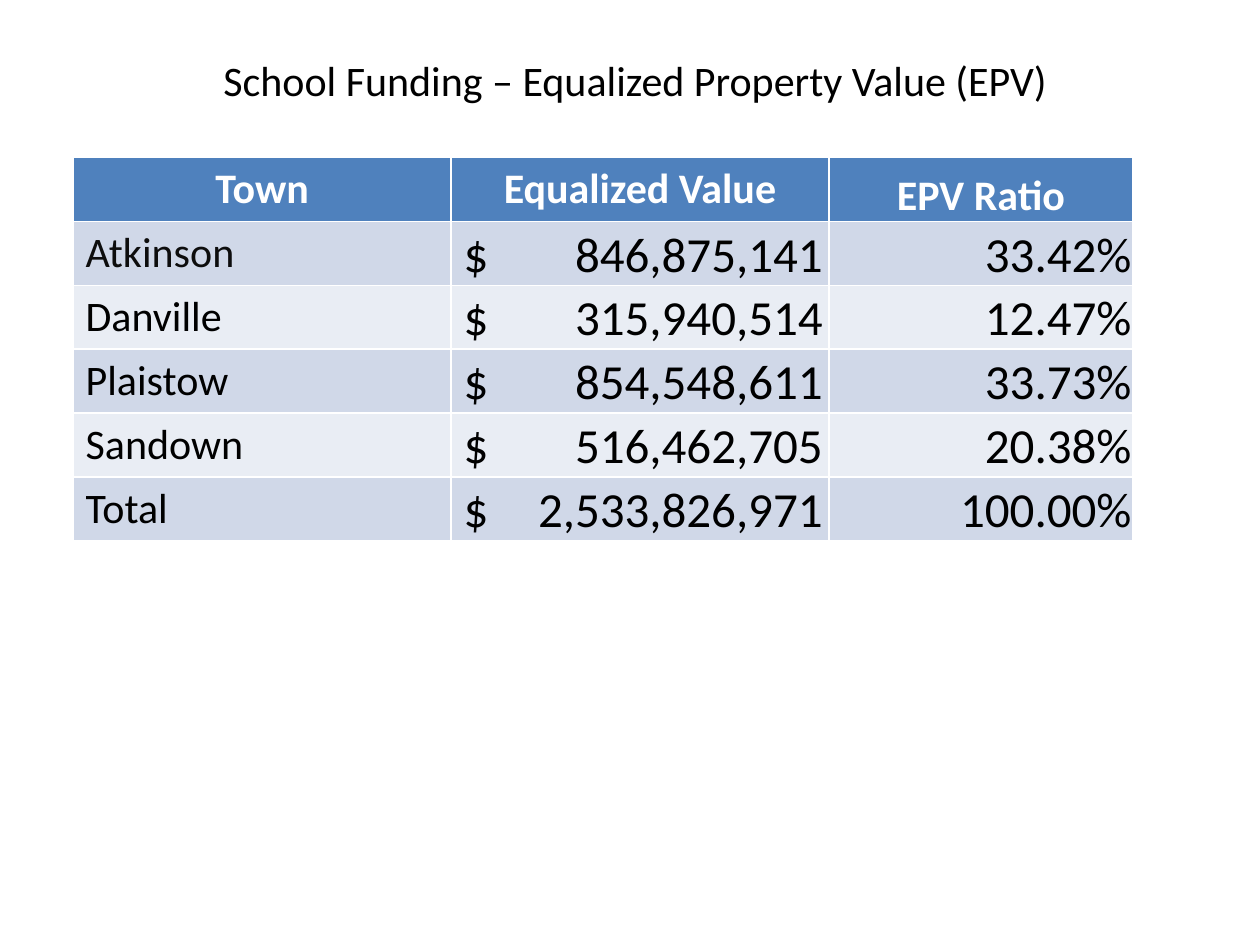
from dataclasses import dataclass

from lxml import etree
from pptx import Presentation
from pptx.dml.color import RGBColor
from pptx.enum.text import MSO_ANCHOR, PP_ALIGN
from pptx.oxml.ns import qn
from pptx.util import Inches, Pt

LEFT, CENTER, RIGHT = PP_ALIGN.LEFT, PP_ALIGN.CENTER, PP_ALIGN.RIGHT
TOP, MIDDLE, BOTTOM = MSO_ANCHOR.TOP, MSO_ANCHOR.MIDDLE, MSO_ANCHOR.BOTTOM
TITLE_SLIDE_LAYOUT = 0


@dataclass(frozen=True)
class Theme:
    font: str = "Calibri"
    text: RGBColor = RGBColor(0, 0, 0)
    first_town: RGBColor = RGBColor(0x0D, 0x0D, 0x0D)
    header_text: RGBColor = RGBColor(0xFF, 0xFF, 0xFF)
    header_fill: RGBColor = RGBColor(0x4F, 0x81, 0xBD)
    bands: tuple = (RGBColor(0xD0, 0xD8, 0xE8), RGBColor(0xE9, 0xED, 0xF4))
    label_size: Pt = Pt(24)
    figure_size: Pt = Pt(28)


THEME = Theme()
HEADINGS = ("Town", "Equalized Value", "EPV Ratio")
TOWNS = (
    ("Atkinson", "846,875,141", "33.42%"),
    ("Danville", "315,940,514", "12.47%"),
    ("Plaistow", "854,548,611", "33.73%"),
    ("Sandown", "516,462,705", "20.38%"),
    ("Total", "2,533,826,971", "100.00%"),
)
COLUMN_WIDTHS = (Inches(3), Inches(3), Inches(2.41))
AMOUNT_TAB = Inches(2.85)


def style_text(paragraph, size, color, align, bold=False):
    paragraph.alignment = align
    for run in paragraph.runs:
        run.font.name = THEME.font
        run.font.size = size
        run.font.bold = bold
        run.font.color.rgb = color


def fill_cell(cell, text, fill, size, color, align, bold=False):
    cell.fill.solid()
    cell.fill.fore_color.rgb = fill
    cell.vertical_anchor = TOP
    cell.text_frame.text = text
    style_text(cell.text_frame.paragraphs[0], size, color, align, bold)


def set_tight(cell, left=Inches(0.01)):
    cell.vertical_anchor = BOTTOM
    cell.margin_left = left
    cell.margin_top = cell.margin_right = Inches(0.01)
    cell.margin_bottom = 0


def add_right_tab(paragraph, position):
    properties = paragraph._p.get_or_add_pPr()
    tabs = etree.SubElement(properties, qn("a:tabLst"))
    etree.SubElement(tabs, qn("a:tab"), pos=str(position), algn="r")


def place_title(slide, left, top, width, height):
    title = slide.shapes.title
    title.left, title.top, title.width, title.height = left, top, width, height
    title.text_frame.text = "School Funding – Equalized Property Value (EPV) "
    title.text_frame.vertical_anchor = MIDDLE
    style_text(title.text_frame.paragraphs[0], THEME.label_size, THEME.text, CENTER)


def place_funding_table(slide, left, top, width, height):
    table = slide.shapes.add_table(
        len(TOWNS) + 1, len(HEADINGS), left, top, width, height
    ).table
    for column, column_width in zip(table.columns, COLUMN_WIDTHS):
        column.width = column_width

    for column, heading in enumerate(HEADINGS):
        fill_cell(table.cell(0, column), heading, THEME.header_fill,
                  THEME.label_size, THEME.header_text, CENTER, bold=True)
    set_tight(table.cell(0, 2))

    for row, (town, value, ratio) in enumerate(TOWNS, start=1):
        band = THEME.bands[(row - 1) % 2]
        town_cell, value_cell, ratio_cell = (table.cell(row, c) for c in range(3))
        town_color = THEME.first_town if row == 1 else THEME.text
        fill_cell(town_cell, town, band, THEME.label_size, town_color, LEFT)
        fill_cell(value_cell, f"$\t{value}", band, THEME.figure_size, THEME.text, LEFT)
        fill_cell(ratio_cell, ratio, band, THEME.figure_size, THEME.text, RIGHT)
        set_tight(value_cell, left=Inches(0.1))
        set_tight(ratio_cell)
        add_right_tab(value_cell.text_frame.paragraphs[0], AMOUNT_TAB)


def main():
    deck = Presentation()
    deck.slide_width, deck.slide_height = Inches(10), Inches(7.5)
    slide = deck.slides.add_slide(deck.slide_layouts[TITLE_SLIDE_LAYOUT])
    subtitle = slide.placeholders[1].element
    subtitle.getparent().remove(subtitle)
    place_title(slide, Inches(0.83), Inches(0.25), Inches(8.5), Inches(0.77))
    place_funding_table(slide, Inches(0.58), Inches(1.25), sum(COLUMN_WIDTHS), Inches(3))
    deck.save("out.pptx")


if __name__ == "__main__":
    main()
